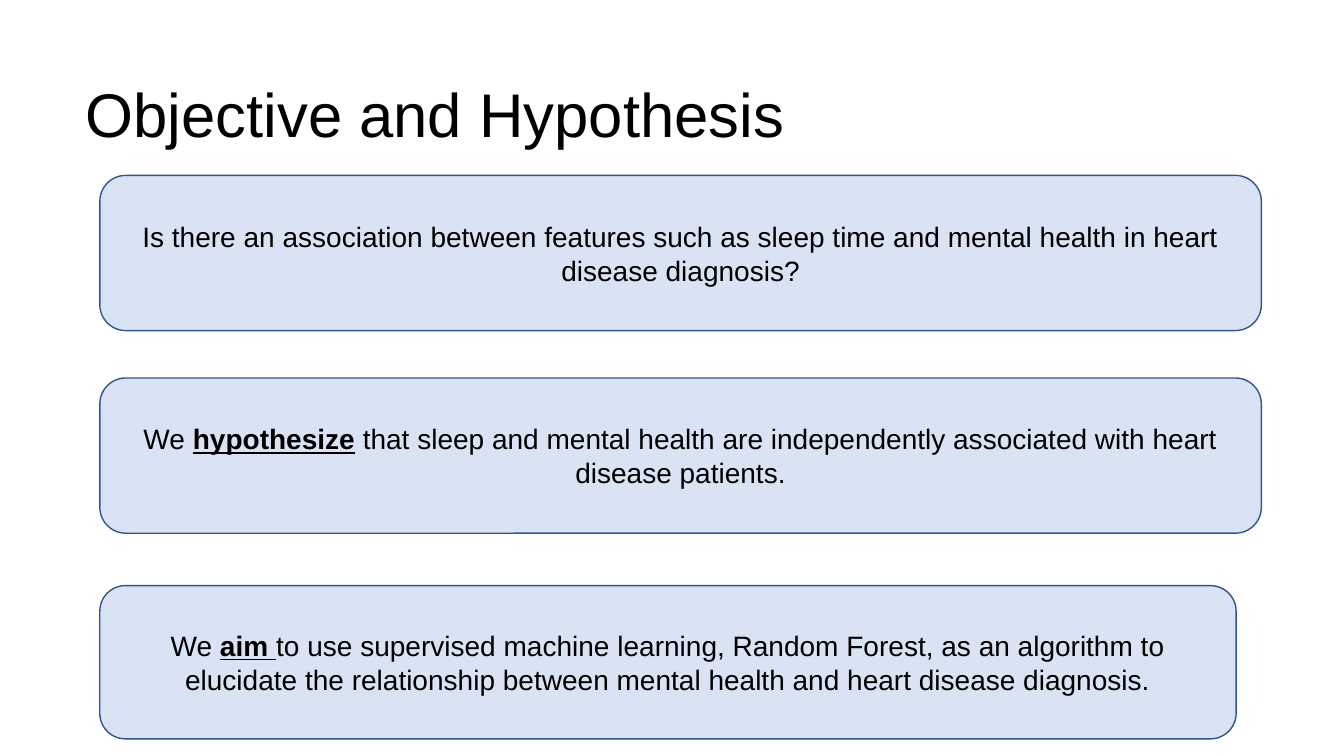
from pptx import Presentation
from pptx.dml.color import RGBColor
from pptx.enum.shapes import MSO_SHAPE
from pptx.enum.text import MSO_ANCHOR, MSO_AUTO_SIZE, PP_ALIGN
from pptx.util import Inches, Pt

COLORS = {"text": "000000", "title_fill": "FFFFFF", "box_fill": "DAE3F3", "box_line": "325491"}
PLAIN = {"name": "Arial", "bold": False, "underline": False}
KEYWORD = {"name": "Arial", "bold": True, "underline": True}

BOX_LEFT = 0.99
STATEMENTS = [  # top, width, height, runs
    (1.74, 11.52, 1.54, [
        ("Is there an association between features such as sleep time and mental health "
         "in heart disease diagnosis?", PLAIN)]),
    (3.75, 11.52, 1.54, [
        ("We ", PLAIN), ("hypothesize", KEYWORD),
        (" that sleep and mental health are independently associated with heart "
         "disease patients.", PLAIN)]),
    (5.81, 11.27, 1.52, [
        ("We ", PLAIN), ("aim ", KEYWORD),
        ("to use supervised machine learning, Random Forest, as an algorithm to elucidate "
         "the relationship between mental health and heart disease diagnosis.", PLAIN)]),
]


def color(key):
    return RGBColor.from_string(COLORS[key])


def fill_solid(shape, key):
    shape.fill.solid()
    shape.fill.fore_color.rgb = color(key)


def write_paragraph(shape, runs, size, alignment):
    """Write formatted runs as the shape's only paragraph, centred vertically."""
    frame = shape.text_frame
    frame.word_wrap = True
    frame.auto_size = MSO_AUTO_SIZE.NONE
    frame.vertical_anchor = MSO_ANCHOR.MIDDLE
    paragraph = frame.paragraphs[0]
    paragraph.alignment = alignment
    for text, formats in runs:
        run = paragraph.add_run()
        run.text = text
        run.font.size = Pt(size)
        run.font.color.rgb = color("text")
        for attribute, value in formats.items():
            setattr(run.font, attribute, value)
    return paragraph


def set_title(slide, text):
    title = slide.shapes.title
    position = {"left": 0.75, "top": 0.62, "width": 11.45, "height": 1.09}
    for attribute, value in position.items():
        setattr(title, attribute, Inches(value))
    fill_solid(title, "title_fill")
    heading = write_paragraph(title, [(text, PLAIN)], 44, PP_ALIGN.LEFT)
    heading.line_spacing = 0.9


def add_statement(slide, top, width, height, runs):
    box = slide.shapes.add_shape(MSO_SHAPE.ROUNDED_RECTANGLE, Inches(BOX_LEFT), Inches(top),
                                 Inches(width), Inches(height))
    box.shadow.inherit = False
    fill_solid(box, "box_fill")
    box.line.color.rgb = color("box_line")
    box.line.width = Pt(1)
    write_paragraph(box, runs, 20, PP_ALIGN.CENTER)


def main():
    deck = Presentation()
    deck.slide_width = Inches(13.33)
    deck.slide_height = Inches(7.5)
    slide = deck.slides.add_slide(deck.slide_layouts[5])
    set_title(slide, "Objective and Hypothesis")
    for statement in STATEMENTS:
        add_statement(slide, *statement)
    deck.save("out.pptx")


if __name__ == "__main__":
    main()
